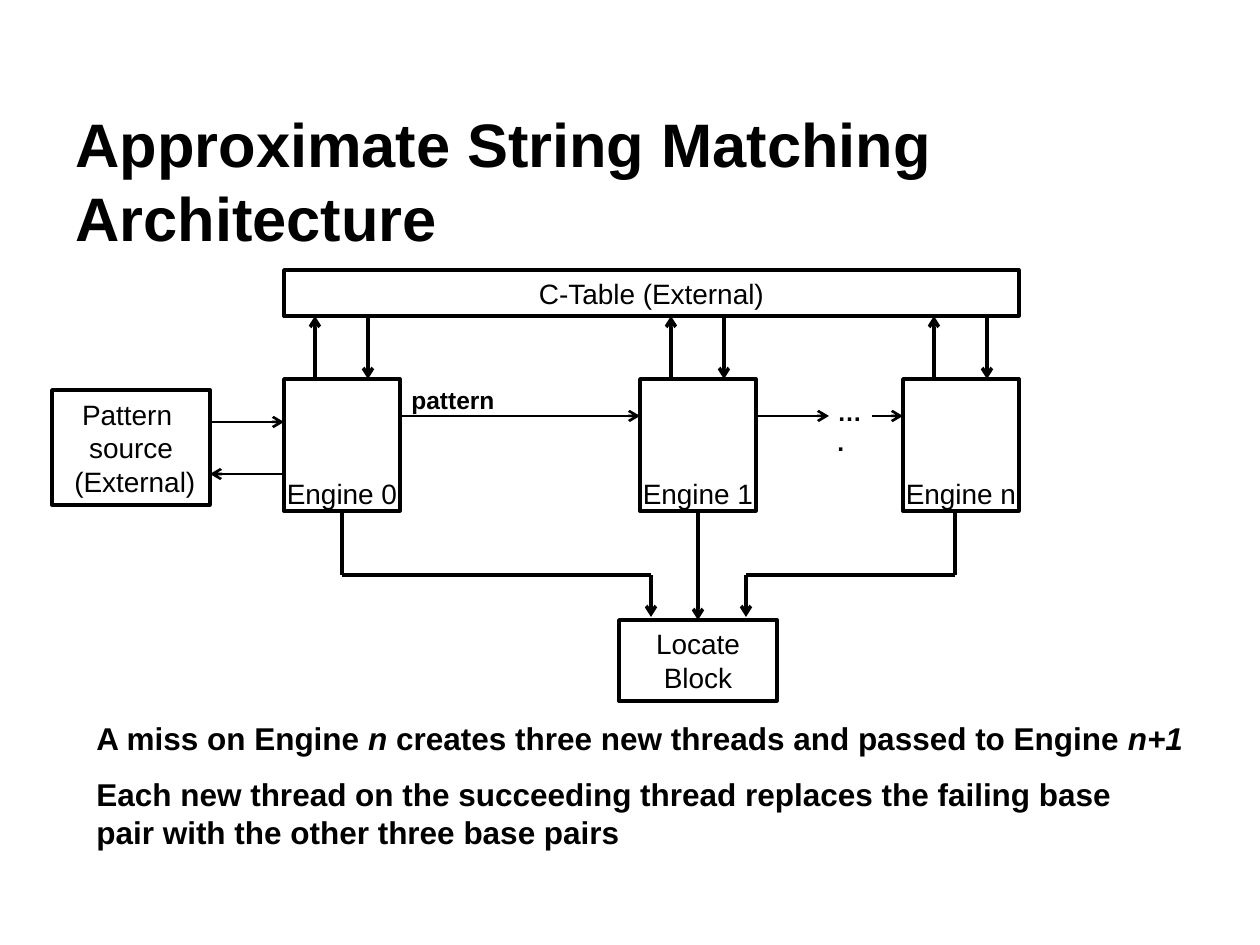
from lxml import etree
from pptx import Presentation
from pptx import util as u
from pptx.dml.color import RGBColor
from pptx.enum import shapes, text
from pptx.oxml import ns

BLACK = RGBColor(0, 0, 0)
PX = 914400 // 126
FONT = "Arial"

# Content
TITLE = "Approximate String Matching Architecture"
ENGINES = [("Engine 0", 284), ("Engine 1", 640), ("Engine n", 903)]
TABLE = ["C-Table (External)"]
SOURCE = ["Pattern ", "source", " (External)"]
LOCATE = ["Locate", "Block"]
# Each run: wording, italic
NOTES = [
    ((84, 713, 1124, 50),
     [("A miss on Engine ", False), ("n", True),
      (" creates three new threads and passed to Engine ", False),
      ("n+1", True)]),
    ((84, 769, 1092, 89),
     [("Each new thread on the succeeding thread replaces the failing base "
       "pair with the other three base pairs", False)]),
]

# Rows of the diagram
WIDE, TALL = 116, 132
TOP, ROOF, FLOW, BUS = 379, 316, 416, 575
BASE = TOP + TALL
LEFT, RIGHT = ENGINES[0][1], ENGINES[-1][1] + WIDE

prs = Presentation()
prs.slide_width, prs.slide_height = u.Inches(10), u.Inches(7.5)
slide = prs.slides.add_slide(prs.slide_layouts[5])


def px(*vals):
    return [v * PX for v in vals]


def style(run, size, bold=False, slant=False):
    font = run.font
    font.name, font.size = FONT, u.Pt(size)
    font.bold, font.italic = bold, slant
    font.color.rgb = BLACK


def fill(frame, lines, size, bold=False, align=text.PP_ALIGN.CENTER):
    frame.word_wrap = True
    for i, line in enumerate(lines):
        para = frame.add_paragraph() if i else frame.paragraphs[0]
        para.text = line
        para.alignment = align
        for run in para.runs:
            style(run, size, bold)


def box(spot, lines=()):
    shape = slide.shapes.add_shape(shapes.MSO_SHAPE.RECTANGLE, *px(*spot))
    shape.shadow.inherit = False
    shape.fill.background()
    shape.line.color.rgb = BLACK
    shape.line.width = u.Pt(2)
    fill(shape.text_frame, lines, 16)
    return shape


def label(spot, word, size, bold=False, align=text.PP_ALIGN.LEFT):
    area = slide.shapes.add_textbox(*px(*spot))
    fill(area.text_frame, [word], size, bold, align)


def line(x1, y1, x2, y2, width=2, arrow=True):
    conn = slide.shapes.add_connector(
        shapes.MSO_CONNECTOR.STRAIGHT, *px(x1, y1, x2, y2))
    conn.line.color.rgb = BLACK
    conn.line.width = u.Pt(width)
    if arrow:
        stroke = conn.line._get_or_add_ln()
        etree.SubElement(stroke, ns.qn("a:tailEnd"), type="arrow")
    etree.SubElement(conn._element.spPr, ns.qn("a:effectLst"))
    return conn


# Title
head = slide.shapes.title
head.left, head.top, head.width, head.height = px(63, 155, 1134, 105)
fill(head.text_frame, [TITLE], 35.1, True, text.PP_ALIGN.LEFT)
head.text_frame.auto_size = text.MSO_AUTO_SIZE.NONE
head.text_frame.vertical_anchor = text.MSO_ANCHOR.BOTTOM

# Blocks
box((LEFT, 270, RIGHT - LEFT, ROOF - 270), TABLE)
box((52, 390, 158, 115), SOURCE)
locate = box((619, 620, 158, 81), LOCATE)

# Engines, each with a request and a reply to the table
cells = []
for name, x in ENGINES:
    cells.append(box((x, TOP, WIDE, TALL)))
    label((x - 21, 470, 158, 46), name, 16, align=text.PP_ALIGN.CENTER)
    line(x + 31, TOP, x + 31, ROOF)
    line(x + 84, ROOF, x + 84, TOP)

# Pattern flow from left to right
label((399, 379, 116, 43), "pattern", 14, True)
label((825, 391, 53, 42), "….", 14, True)
for x1, x2, y in [(210, LEFT, 422), (LEFT, 210, 474),
                  (LEFT + WIDE, ENGINES[1][1], FLOW),
                  (ENGINES[1][1] + WIDE, 829, FLOW),
                  (872, ENGINES[2][1], FLOW)]:
    line(x1, y, x2, y, 1.5)

# Results down to the locate block
down = line(698, BASE, 698, 620)
down.begin_connect(cells[1], 2)
down.end_connect(locate, 0)
for x, turn in [(342, 651), (955, 746)]:
    drop = line(x, BASE, x, BUS, arrow=False)
    if x == LEFT + WIDE // 2:
        drop.begin_connect(cells[0], 2)
    line(x, BUS, turn, BUS, arrow=False)
    line(turn, BUS, turn, 617)

# Notes
for spot, runs in NOTES:
    frame = slide.shapes.add_textbox(*px(*spot)).text_frame
    frame.word_wrap = True
    for words, slant in runs:
        run = frame.paragraphs[0].add_run()
        run.text = words
        style(run, 18, True, slant)

prs.save("out.pptx")
